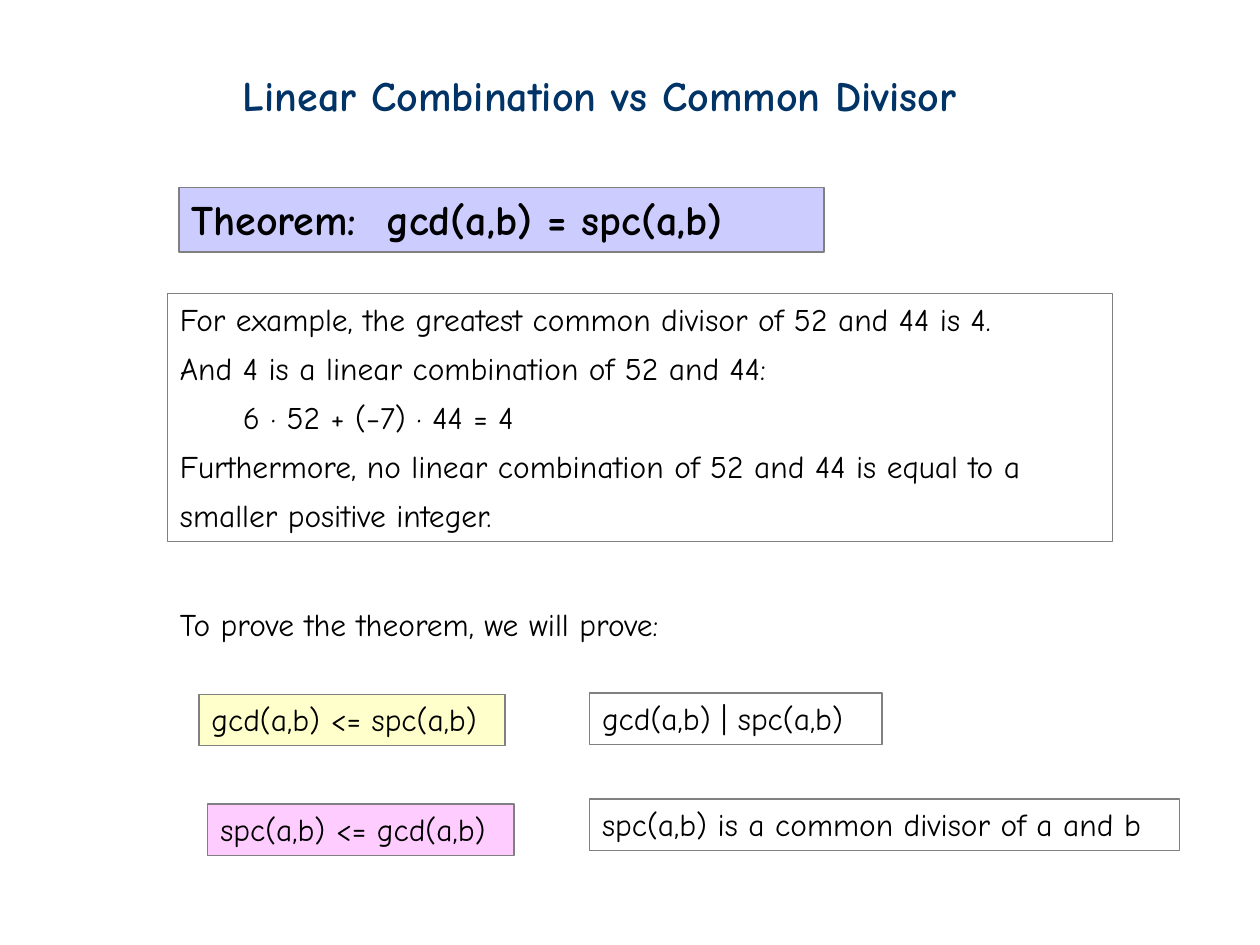
from dataclasses import dataclass

from pptx import Presentation
from pptx.dml.color import RGBColor
from pptx.enum.shapes import MSO_SHAPE as Shape
from pptx.enum.text import MSO_ANCHOR as Anchor, MSO_AUTO_SIZE as AutoSize, PP_ALIGN as Align
from pptx.util import Inches, Pt


@dataclass(frozen=True)
class Theme:
    font: str = "Comic Neue"
    heading: int = 24
    body: int = 18
    ink: str = "000000"
    title: str = "003366"
    border: str = "808080"
    lavender: str = "CCCCFF"
    yellow: str = "FFFFCC"
    pink: str = "FFCCFF"


THEME = Theme()


def rgb(value):
    return RGBColor.from_string(value)


def write(tf, text, size=THEME.body, color=THEME.ink, bold=False, spacing=None):
    tf.word_wrap = True
    tf.auto_size = AutoSize.SHAPE_TO_FIT_TEXT
    tf.vertical_anchor = Anchor.TOP
    for i, line in enumerate(text.split("\n")):
        p = tf.paragraphs[0] if i == 0 else tf.add_paragraph()
        p.alignment = Align.LEFT
        if i and spacing:
            p.line_spacing = spacing
        r = p.add_run()
        r.text = line
        r.font.name = THEME.font
        r.font.size = Pt(size)
        r.font.bold = bold
        r.font.color.rgb = rgb(color)


def add_label(s, box, text, **fmt):
    sp = s.shapes.add_textbox(*map(Inches, box))
    write(sp.text_frame, text, **fmt)


def add_box(s, box, text, fill=None, **fmt):
    sp = s.shapes.add_shape(Shape.RECTANGLE, *map(Inches, box))
    sp.shadow.inherit = False
    if fill:
        sp.fill.solid()
        sp.fill.fore_color.rgb = rgb(fill)
    else:
        sp.fill.background()
    sp.line.color.rgb = rgb(THEME.border)
    sp.line.width = Pt(0.75)
    write(sp.text_frame, text, **fmt)


def main():
    prs = Presentation()
    prs.slide_width, prs.slide_height = Inches(10), Inches(7.5)
    s = prs.slides.add_slide(prs.slide_layouts[6])

    add_box(s, (1.42, 1.49, 5.12, 0.51), "Theorem:  gcd(a,b) = spc(a,b)",
            fill=THEME.lavender, size=THEME.heading, bold=True)
    add_label(s, (1.83, 0.5, 6.32, 0.5), "Linear Combination vs Common Divisor",
              size=THEME.heading, color=THEME.title, bold=True)

    example = "\n".join([
        "For example, the greatest common divisor of 52 and 44 is 4.",
        "And 4 is a linear combination of 52 and 44:",
        "\t6 · 52 + (−7) · 44 = 4",
        "Furthermore, no linear combination of 52 and 44 is equal to a smaller positive integer.",
    ])
    add_box(s, (1.33, 2.33, 7.5, 1.97), example, spacing=1.3)
    add_label(s, (1.33, 4.75, 4.45, 0.4), "To prove the theorem, we will prove:")

    claims = [
        (1.58, 5.51, 2.43, "gcd(a,b) <= spc(a,b)", THEME.yellow),
        (1.65, 6.38, 2.43, "spc(a,b) <= gcd(a,b)", THEME.pink),
        (4.68, 5.5, 2.32, "gcd(a,b) | spc(a,b)", None),
        (4.68, 6.34, 4.68, "spc(a,b) is a common divisor of a and b", None),
    ]
    for left, top, width, text, fill in claims:
        add_box(s, (left, top, width, 0.41), text, fill=fill)

    prs.save("out.pptx")


if __name__ == "__main__":
    main()
